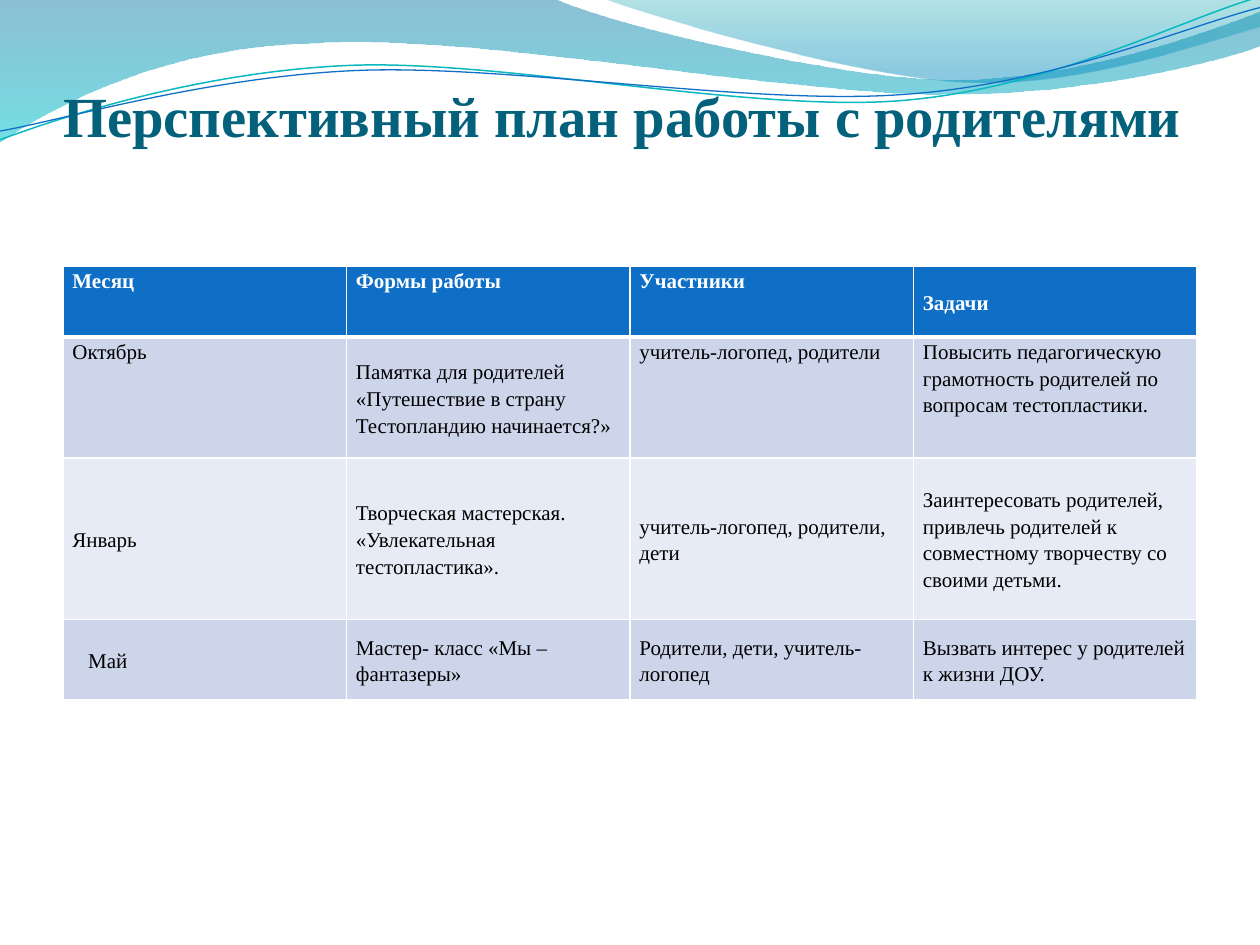
import math

from lxml import etree
from pptx import Presentation
from pptx.dml.color import RGBColor
from pptx.enum import text
from pptx.oxml import ns
from pptx.util import Pt

FONT = "Times New Roman"
WHITE = RGBColor(0xFF, 0xFF, 0xFF)
BLACK = RGBColor(0x00, 0x00, 0x00)
TITLE_TEAL = RGBColor(0x04, 0x61, 0x7B)
HEADER_BLUE = RGBColor(0x0F, 0x6F, 0xC6)
BAND_DARK = RGBColor(0xCC, 0xD5, 0xEA)
BAND_LIGHT = RGBColor(0xE7, 0xEB, 0xF5)
LINE_TEAL = RGBColor(0x0A, 0xB8, 0xBF)
WAVE_BLUE = RGBColor(0x00, 0x74, 0xA1)
WAVE_CYAN = RGBColor(0x00, 0xC6, 0xCF)
WAVE_TEAL = RGBColor(0x00, 0xA1, 0xA9)
WAVE_SKY = RGBColor(0x00, 0x8B, 0xBF)

deck = Presentation()
deck.slide_width, deck.slide_height = Pt(720), Pt(540)
page = deck.slides.add_slide(deck.slide_layouts[5])


def add_wave(bounds, start, pieces, closed, tilt=0):
    """Outline from pieces: one point is a line, three points a Bezier curve."""
    left, top, width, height = bounds
    cosine, sine = math.cos(math.radians(tilt)), math.sin(math.radians(tilt))

    def local(point):
        # Undo the tilt about the centre, then measure from the top left corner
        dx, dy = point[0] - left - width / 2, point[1] - top - height / 2
        return (Pt(width / 2 + dx * cosine + dy * sine),
                Pt(height / 2 - dx * sine + dy * cosine))

    builder = page.shapes.build_freeform(*local(start))
    builder.add_line_segments([local(piece[-1]) for piece in pieces], close=closed)
    wave = builder.convert_to_shape()
    wave.left, wave.top, wave.width, wave.height = (Pt(side) for side in bounds)
    wave.rotation = tilt % 360
    wave.shadow.inherit = False
    outline = next(wave.element.iter(ns.qn("a:path")))
    outline.set("w", str(Pt(width)))
    outline.set("h", str(Pt(height)))
    moves = [move for move in outline if move.tag != ns.qn("a:close")]
    for move, piece in zip(moves, [[start], *pieces]):
        if len(piece) == 3:
            move_to = etree.Element(ns.qn("a:cubicBezTo"))
            outline.replace(move, move_to)
            move = move_to
        for spot in list(move):
            move.remove(spot)
        for x, y in map(local, piece):
            etree.SubElement(move, ns.qn("a:pt"), x=str(x), y=str(y))
    return wave


# Translucent waves: bounds, start, pieces, gradient stops (position, colour, opacity %)
bands = [
    ((-0.7, -0.7, 721.4, 82.1), (0, 0),
     [[(316.8, -0.7)],
      [(342.7, 12.2), (478.1, 45.4), (545.8, 45.4)],
      [(614.2, 45.4), (689.8, 18.7), (720, 6.5)],
      [(720.7, 25.9)],
      [(707.8, 31.7), (626.4, 54.7), (537.1, 54)],
      [(447.8, 54), (275, 20.2), (185, 24.5)],
      [(92.9, 25.9), (33.1, 59.8), (-0.7, 81.4)]],
     [(0, WAVE_BLUE, 45), (1, WAVE_CYAN, 55)]),
    ((344.9, -0.7, 375.1, 50.4), (344.9, -0.7),
     [[(366.5, 7.9), (491, 44.6), (553.7, 46.8)],
      [(616.3, 49.7), (691.9, 23), (720, 15.1)],
      [(720, 0)]],
     [(0, WAVE_TEAL, 30), (0.8, WAVE_SKY, 45)]),
]
for bounds, start, pieces, stops in bands:
    wave = add_wave(bounds, start, pieces, True)
    wave.line.fill.background()
    wave.fill.gradient()
    wave.fill.gradient_angle = 270
    for stop, (position, colour, opacity) in zip(wave.fill.gradient_stops, stops):
        stop.position = position
        stop.color.rgb = colour
    for tint, (position, colour, opacity) in zip(wave.element.spPr.iter(ns.qn("a:srgbClr")), stops):
        etree.SubElement(tint, ns.qn("a:alpha")).set("val", str(opacity * 1000))

# Thin wavy lines: bounds, start, pieces, colour, width
threads = [
    ((-1.4, 15.8, 721.4, 51.1), (0, 79.9),
     [[(34.6, 67), (113.8, 41), (199.4, 37.4)],
      [(284.4, 33.8), (427, 64.1), (513.4, 57.6)],
      [(599.8, 51.1), (675.4, 10.8), (718.6, -1.4)]], LINE_TEAL, 0.85),
    ((-1.4, 21.6, 722.2, 41.8), (0, 74.9),
     [[(33.8, 69.1), (118.1, 43.9), (203.8, 40.3)],
      [(290.2, 36.7), (429.8, 60.5), (516.2, 54)],
      [(601.9, 48.2), (677.5, 15.1), (720, 4.3)]], HEADER_BLUE, 0.75),
]
for bounds, start, pieces, colour, width in threads:
    thread = add_wave(bounds, start, pieces, False, -2.7)
    thread.fill.background()
    thread.line.color.rgb = colour
    thread.line.width = Pt(width)

# Title, moved in front of the waves
title = page.shapes.title
title.element.getparent().append(title.element)
title.left, title.top, title.width, title.height = Pt(36), Pt(46), Pt(648), Pt(99.4)
frame = title.text_frame
frame.margin_left = frame.margin_top = frame.margin_right = frame.margin_bottom = 0
frame.vertical_anchor = text.MSO_ANCHOR.TOP
frame.text = "Перспективный план работы с родителями"
heading = frame.paragraphs[0]
heading.alignment = text.PP_ALIGN.LEFT
heading.font.name, heading.font.size, heading.font.bold = FONT, Pt(32.4), True
heading.font.color.rgb = TITLE_TEAL

# Work plan table
rows = [
    ("Месяц", "Формы работы", "Участники", "Задачи"),
    ("Октябрь", "Памятка для родителей «Путешествие в страну Тестопландию начинается?»",
     "учитель-логопед, родители",
     "Повысить педагогическую грамотность родителей по вопросам тестопластики."),
    ("Январь", "Творческая мастерская. «Увлекательная тестопластика».",
     "учитель-логопед, родители, дети",
     "Заинтересовать родителей, привлечь родителей к совместному творчеству со своими детьми."),
    ("Май", "Мастер- класс «Мы – фантазеры»", "Родители, дети, учитель-логопед",
     "Вызвать интерес у родителей к жизни ДОУ."),
]
heights = [40.32, 69.12, 92.16, 46.08]
fills = [HEADER_BLUE, BAND_DARK, BAND_LIGHT, BAND_DARK]
top_cells = {(0, 0), (0, 1), (0, 2), (1, 0), (1, 2), (1, 3)}
plan = page.shapes.add_table(4, 4, Pt(36), Pt(152.3), Pt(648), Pt(sum(heights))).table
for r, labels in enumerate(rows):
    plan.rows[r].height = Pt(heights[r])
    for c, label in enumerate(labels):
        cell = plan.cell(r, c)
        cell.fill.solid()
        cell.fill.fore_color.rgb = fills[r]
        cell.margin_left = cell.margin_right = Pt(5.4)
        cell.margin_top = cell.margin_bottom = 0
        cell.vertical_anchor = text.MSO_ANCHOR.TOP if (r, c) in top_cells else text.MSO_ANCHOR.MIDDLE
        cell.text = label
        para = cell.text_frame.paragraphs[0]
        para.line_spacing = 1.15
        para.font.name, para.font.size, para.font.bold = FONT, Pt(12), r == 0
        para.font.color.rgb = WHITE if r == 0 else BLACK
plan.cell(3, 0).margin_left = Pt(14.4)  # the last month is indented

# White header borders, thicker below
for cell in plan.rows[0].cells:
    properties = cell._tc.get_or_add_tcPr()
    for place, (side, weight) in enumerate([("L", 1), ("R", 1), ("T", 1), ("B", 3)]):
        border = etree.Element(ns.qn(f"a:ln{side}"), w=str(Pt(weight)))
        paint = etree.SubElement(border, ns.qn("a:solidFill"))
        etree.SubElement(paint, ns.qn("a:srgbClr"), val=str(WHITE))
        properties.insert(place, border)

deck.save("out.pptx")
